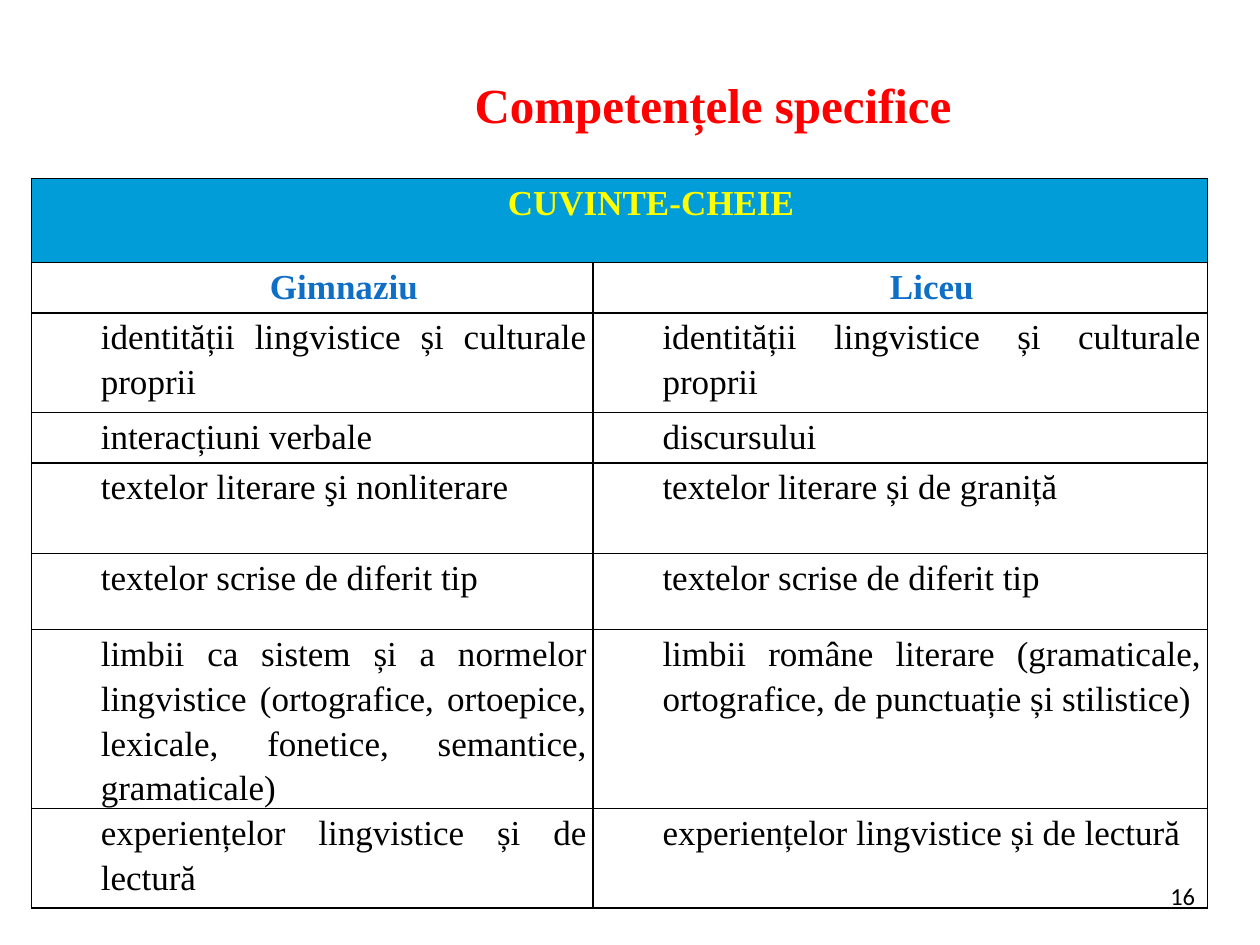
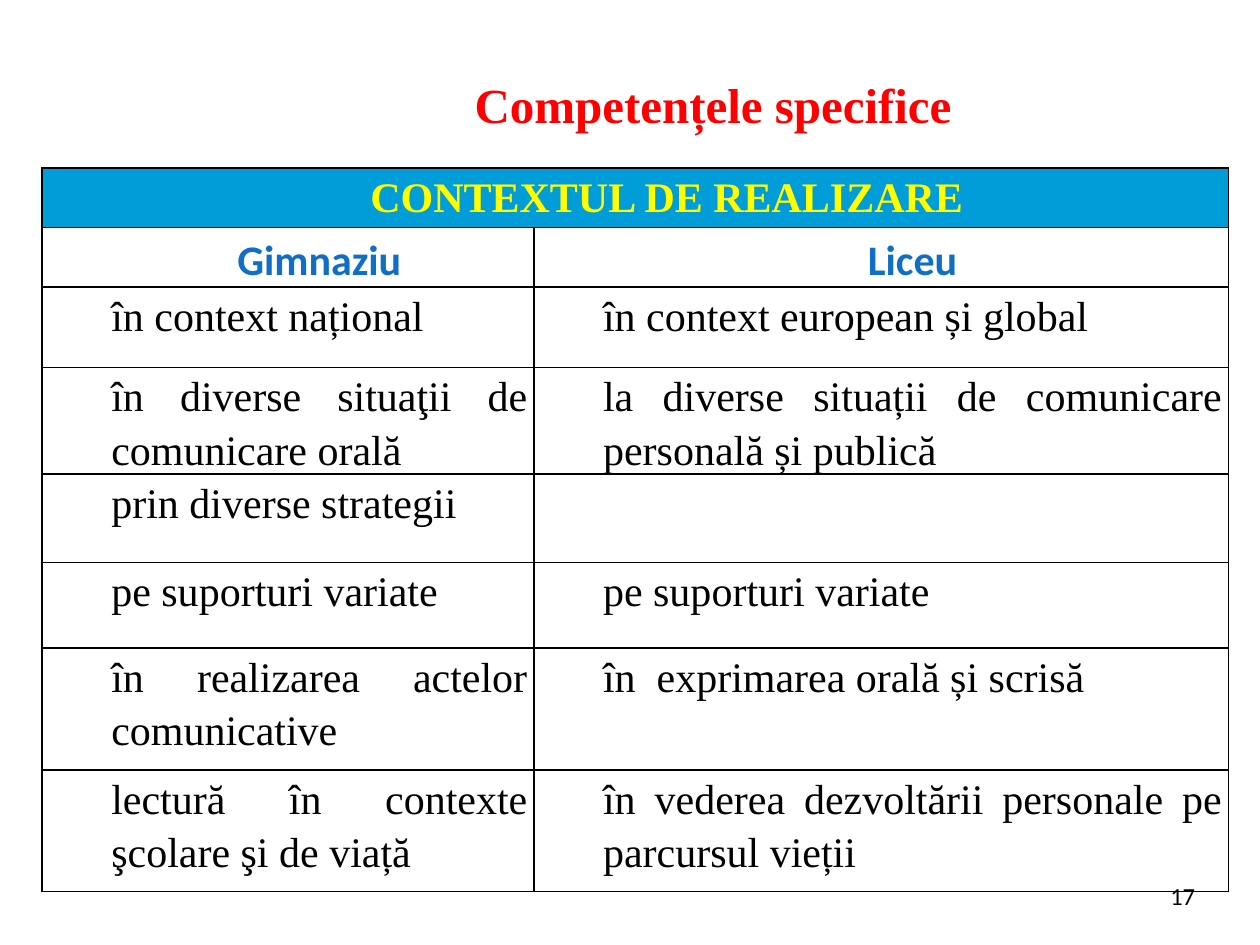
from lxml import etree
from pptx import Presentation
from pptx.dml.color import RGBColor
from pptx.enum import text as t
from pptx.oxml import parse_xml
from pptx.oxml.ns import nsdecls
from pptx.util import Pt

RED = RGBColor(0xFF, 0x00, 0x00)
YELLOW = RGBColor(0xFF, 0xFF, 0x00)
BAND = RGBColor(0x00, 0x9D, 0xD9)
BLUE = RGBColor(0x0F, 0x6F, 0xC6)
BLACK = RGBColor(0x00, 0x00, 0x00)
SERIF, SANS = "Times New Roman", "Calibri"

TITLE = "Competențele specifice"
HEADS = ("Gimnaziu", "Liceu")

# Content: one table per slide, lengths in points
SLIDES = [
    dict(number=16, band="CUVINTE-CHEIE", size=20, head_font=SERIF,
         left=18, top=102, cols=(321, 351),
         heights=(48, 28.8, 56.9, 28.8, 51.8, 43.6, 85, 56.9),
         rows=[
             ("identității lingvistice și culturale proprii",
              "identității lingvistice și culturale proprii"),
             ("interacțiuni verbale", "discursului"),
             ("textelor literare şi nonliterare", "textelor literare și de graniță"),
             ("textelor scrise de diferit tip", "textelor scrise de diferit tip"),
             ("limbii ca sistem și a normelor lingvistice (ortografice, ortoepice, "
              "lexicale, fonetice, semantice, gramaticale)",
              "limbii române literare (gramaticale, ortografice, de punctuație "
              "și stilistice)"),
             ("experiențelor lingvistice și de lectură",
              "experiențelor lingvistice și de lectură"),
         ]),
    dict(number=17, band="CONTEXTUL DE REALIZARE", size=24, head_font=SANS,
         left=24, top=96, cols=(281, 397),
         heights=(34, 34, 46, 42.5, 50.4, 49, 69.6, 69.6),
         rows=[
             ("în context național", "în context european și global"),
             ("în diverse situaţii de comunicare orală",
              "la diverse situații de comunicare personală și publică"),
             ("prin diverse strategii", ""),
             ("pe suporturi variate", "pe suporturi variate"),
             ("în realizarea actelor comunicative", "în  exprimarea orală și scrisă"),
             ("lectură în contexte şcolare şi de viață",
              "în vederea dezvoltării personale pe parcursul vieții"),
         ]),
]


def add_run(p, words, size, font, color, bold=False):
    r = p.add_run()
    r.text = words
    r.font.size, r.font.name, r.font.bold = Pt(size), font, bold
    r.font.color.rgb = color


def add_borders(cell):
    tcPr = cell._tc.get_or_add_tcPr()
    for i, side in enumerate(("lnL", "lnR", "lnT", "lnB")):
        tcPr.insert(i, parse_xml(
            f'<a:{side} {nsdecls("a")} w="12700"><a:solidFill>'
            f'<a:srgbClr val="{BLACK}"/></a:solidFill></a:{side}>'))


def fill_cell(cell, words, size, font, color, bold, align, after=10):
    cell.margin_left = cell.margin_right = Pt(3.6)
    cell.margin_top = cell.margin_bottom = 0
    if not words:
        return
    p = cell.text_frame.paragraphs[0]
    pPr = p._p.get_or_add_pPr()
    pPr.set("marL", str(Pt(36)))
    pPr.set("indent", "0")
    p.alignment, p.line_spacing = align, 1.15
    p.space_after = Pt(after)
    add_run(p, words, size, font, color, bold)


def add_title(s):
    sp = s.shapes.title
    sp.left, sp.top, sp.width, sp.height = Pt(264), Pt(36), Pt(420), Pt(78)
    tf = sp.text_frame
    tf.word_wrap, tf.auto_size = True, t.MSO_AUTO_SIZE.NONE
    tf.vertical_anchor, tf.margin_top = t.MSO_ANCHOR.TOP, Pt(6.5)
    p = tf.paragraphs[0]
    p.alignment = t.PP_ALIGN.LEFT
    add_run(p, TITLE, 28, SERIF, RED, True)


def add_comparison(s, d):
    rows = [(d["band"], ""), HEADS] + d["rows"]
    tbl = s.shapes.add_table(len(rows), 2, Pt(d["left"]), Pt(d["top"]),
                             Pt(sum(d["cols"])), Pt(sum(d["heights"]))).table
    tbl.first_row = tbl.horz_banding = False
    for col, width in zip(tbl.columns, d["cols"]):
        col.width = Pt(width)
    for row, height in zip(tbl.rows, d["heights"]):
        row.height = Pt(height)
    tbl.cell(0, 0).merge(tbl.cell(0, 1))

    center, justify = t.PP_ALIGN.CENTER, t.PP_ALIGN.JUSTIFY
    for i, row in enumerate(rows):
        for j, words in enumerate(row):
            cell = tbl.cell(i, j)
            if i == 0:
                style = (SERIF, YELLOW, True, center, 0)
                cell.fill.solid()
                cell.fill.fore_color.rgb = BAND
            else:
                style = ((d["head_font"], BLUE, True, center) if i == 1
                         else (SERIF, BLACK, False, justify))
                cell.fill.background()
            fill_cell(cell, words, d["size"], *style)
            add_borders(cell)


def add_number(s, number):
    tf = s.shapes.add_textbox(Pt(522), Pt(486), Pt(168), Pt(37.5)).text_frame
    tf.word_wrap, tf.vertical_anchor = True, t.MSO_ANCHOR.BOTTOM
    p = tf.paragraphs[0]
    p.alignment = t.PP_ALIGN.RIGHT
    add_run(p, str(number), 14, SANS, BLACK)


def main():
    prs = Presentation()
    prs.slide_width, prs.slide_height = Pt(720), Pt(540)
    for d in SLIDES:
        s = prs.slides.add_slide(prs.slide_layouts[5])
        add_title(s)
        add_comparison(s, d)
        add_number(s, d["number"])
    prs.save("out.pptx")


if __name__ == "__main__":
    main()
